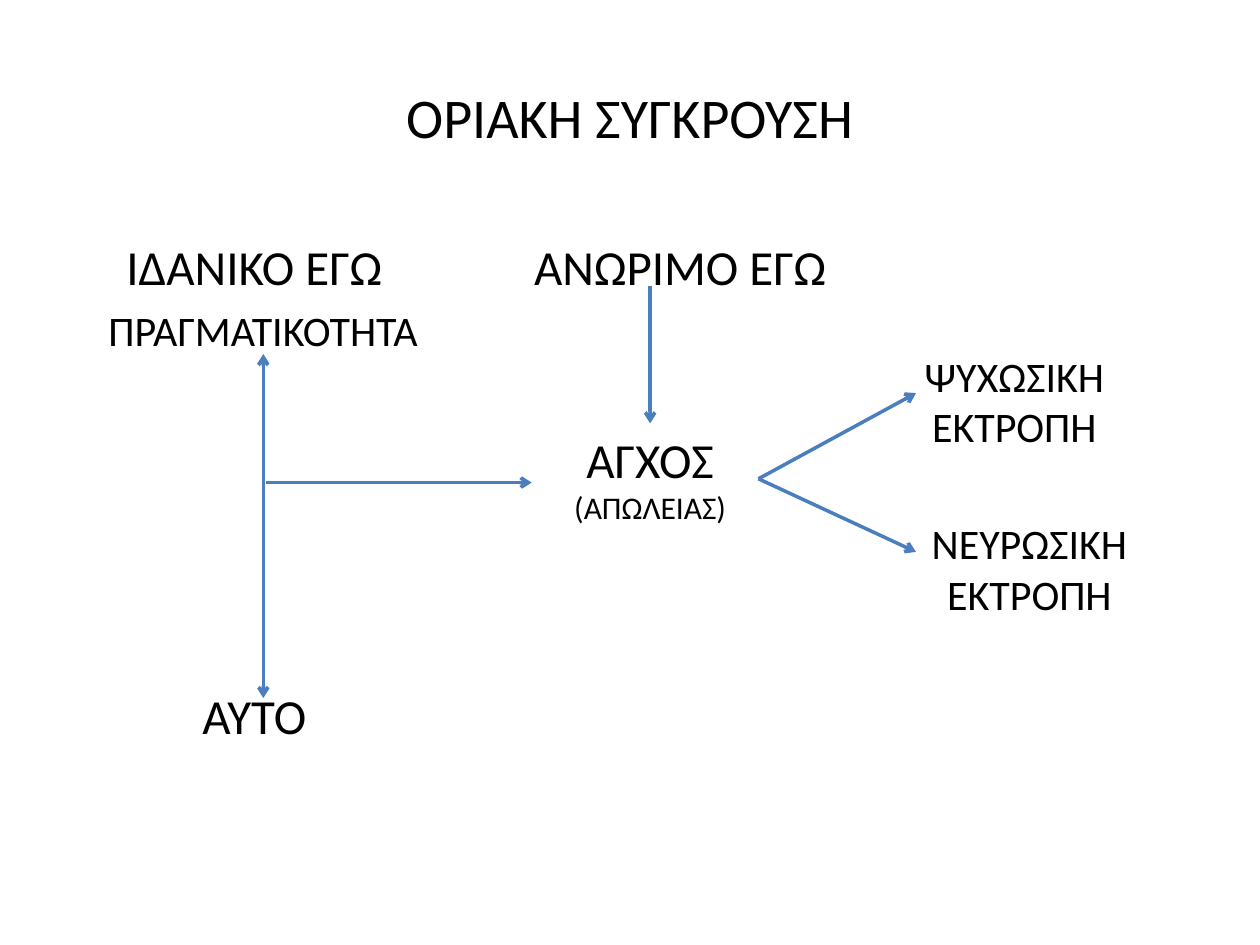
"""Build the borderline conflict diagram slide."""
import pptx
import pptx.dml.color
import pptx.enum.shapes
import pptx.enum.text
import pptx.oxml.ns
import pptx.util
from lxml import etree

BLACK = pptx.dml.color.RGBColor(0x00, 0x00, 0x00)
BLUE = pptx.dml.color.RGBColor(0x4B, 0x7E, 0xBC)
CENTER = pptx.enum.text.PP_ALIGN.CENTER
LEFT = pptx.enum.text.PP_ALIGN.LEFT
TOP = pptx.enum.text.MSO_ANCHOR.TOP
MIDDLE = pptx.enum.text.MSO_ANCHOR.MIDDLE

presentation = pptx.Presentation()
presentation.slide_width = pptx.util.Inches(10)
presentation.slide_height = pptx.util.Inches(7.5)
column = presentation.slide_width / 100
row = presentation.slide_height / 75
slide = presentation.slides.add_slide(presentation.slide_layouts[6])


def add_element(parent, tag, **attributes):
    return etree.SubElement(parent, pptx.oxml.ns.qn(tag), attributes)


def add_text(left, top, width, height, lines, alignment=CENTER, anchor=TOP):
    box = slide.shapes.add_textbox(
        int(left * column), int(top * row), int(width * column), int(height * row)
    )
    frame = box.text_frame
    frame.word_wrap = True
    frame.vertical_anchor = anchor
    frame.text = "\n".join(text for text, size in lines)
    for paragraph, (text, size) in zip(frame.paragraphs, lines):
        paragraph.alignment = alignment
        for run in paragraph.runs:
            run.font.name = "Calibri"
            run.font.size = pptx.util.Pt(size)
            run.font.color.rgb = BLACK
    return frame


add_text(5, 3, 90, 12.5, [("ΟΡΙΑΚΗ ΣΥΓΚΡΟΥΣΗ", 32)], anchor=MIDDLE)

forces = add_text(
    5, 18.3, 90, 48.7,
    [("\tΙΔΑΝΙΚΟ ΕΓΩ\tΑΝΩΡΙΜΟ ΕΓΩ", 28), ("\tΠΡΑΓΜΑΤΙΚΟΤΗΤΑ", 24), ("\tΑΥΤΟ", 28)],
    alignment=LEFT,
)
tab_columns = [(14.2, 48), (14.9,), (14.2,)]
spaces_before = [0, 5, 189]
for paragraph, stops, space in zip(forces.paragraphs, tab_columns, spaces_before):
    paragraph.space_before = pptx.util.Pt(space)
    tab_list = add_element(paragraph._p.get_or_add_pPr(), "a:tabLst")
    for stop in stops:
        add_element(tab_list, "a:tab", pos=str(int(stop * column)), algn="ctr")

add_text(43, 33.6, 17.2, 8.8, [("ΑΓΧΟΣ", 28), ("(ΑΠΩΛΕΙΑΣ)", 18)])
add_text(71.9, 27.3, 17.2, 9.1, [("ΨΥΧΩΣΙΚΗ", 24), ("ΕΚΤΡΟΠΗ", 24)])
add_text(72.7, 40.6, 18, 9.1, [("ΝΕΥΡΩΣΙΚΗ", 24), ("ΕΚΤΡΟΠΗ", 24)])

arrows = [
    (20.9, 28.1, 20.9, 55.4, ("a:headEnd", "a:tailEnd")),
    (21.1, 38.3, 42.2, 38.3, ("a:tailEnd",)),
    (51.6, 22.7, 51.6, 33.6, ("a:tailEnd",)),
    (60.2, 38, 72.7, 31.2, ("a:tailEnd",)),
    (60.2, 38, 72.7, 43.8, ("a:tailEnd",)),
]
for start_x, start_y, end_x, end_y, ends in arrows:
    connector = slide.shapes.add_connector(
        pptx.enum.shapes.MSO_CONNECTOR.STRAIGHT,
        int(start_x * column), int(start_y * row), int(end_x * column), int(end_y * row),
    )
    connector.line.color.rgb = BLUE
    connector.line.width = pptx.util.Pt(2)
    for end in ends:
        add_element(connector.line._get_or_add_ln(), end, type="arrow")
    add_element(connector._element.spPr, "a:effectLst")

presentation.save("out.pptx")
